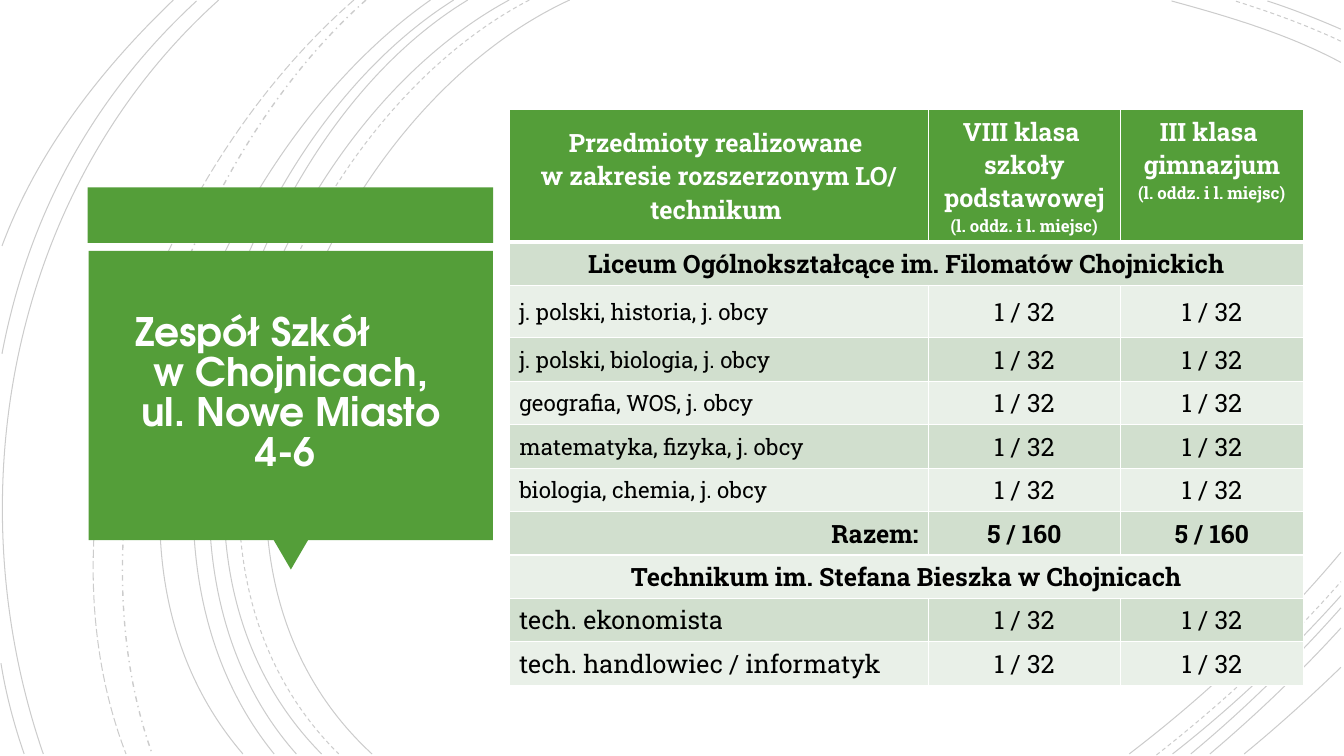
from dataclasses import dataclass

import pptx
import pptx.dml.color
import pptx.enum.dml
import pptx.enum.shapes
import pptx.enum.text
import pptx.oxml
import pptx.oxml.ns
import pptx.util
from pptx.util import Inches

Align = pptx.enum.text.PP_ALIGN
Anchor = pptx.enum.text.MSO_ANCHOR
Dash = pptx.enum.dml.MSO_LINE
Preset = pptx.enum.shapes.MSO_SHAPE
Point = tuple[float, float]


@dataclass(frozen=True)
class Theme:
    """Colours, fonts and type sizes of the slide."""
    green: str = "549E39"
    band_dark: str = "D1DFCE"
    band_light: str = "E9F0E8"
    white: str = "FFFFFF"
    black: str = "000000"
    title_font: str = "TeX Gyre Adventor"
    body_font: str = "Roboto Slab"
    title_size: int = 28
    table_size: int = 18
    subject_size: int = 16
    note_size: int = 12
    arc_opacity: int = 20


@dataclass(frozen=True)
class Arc:
    """A cubic curve with its two ends and two control points."""
    start: Point
    control_1: Point
    control_2: Point
    end: Point
    dash: Dash = Dash.SOLID
    width: float = 0.75


@dataclass(frozen=True)
class Block:
    """A green preset shape of the title panel."""
    preset: Preset
    left: float
    top: float
    width: float
    height: float
    rotation: int = 0


@dataclass(frozen=True)
class Row:
    """A table row with its texts, type size, weight and alignment."""
    texts: tuple[str, ...]
    size: int
    bold: bool = False
    align: Align = Align.LEFT
    height: float = 0.4


THEME = Theme()
ARCS = (
    Arc((5.65, 0), (3.15, 1.15), (1.43, 5.4), (3.69, 7.48)),
    Arc((13.3, 0.62), (12.78, 0.34), (12.17, 0.16), (11.62, 0.01)),
    Arc((11.2, 7.48), (11.96, 6.9), (12.68, 6.22), (13.3, 5.48)),
    Arc((5.25, 0), (2.85, 1.25), (1.23, 5.37), (3.36, 7.48), Dash.DASH),
    Arc((13.3, 0.41), (12.96, 0.25), (12.6, 0.12), (12.25, 0.01), Dash.DASH),
    Arc((11.47, 7.49), (12.12, 6.98), (12.75, 6.4), (13.3, 5.77), Dash.DASH),
    Arc((5.05, 0), (2.7, 1.27), (1.1, 5.37), (3.19, 7.48)),
    Arc((13.3, 0.29), (13.07, 0.19), (12.82, 0.09), (12.57, 0.01)),
    Arc((11.63, 7.48), (12.23, 7.01), (12.79, 6.48), (13.3, 5.91)),
    Arc((4.64, 0), (2.44, 1.33), (1.1, 5.41), (2.94, 7.48)),
    Arc((11.81, 7.48), (12.34, 7.04), (12.84, 6.55), (13.3, 6.03)),
    Arc((4.5, 0), (2.31, 1.38), (0.97, 5.33), (2.72, 7.48)),
    Arc((12, 7.48), (12.46, 7.09), (12.9, 6.67), (13.3, 6.23)),
    Arc((4.27, 0), (2.17, 1.47), (0.53, 5.29), (2.41, 7.48)),
    Arc((12.34, 7.48), (12.67, 7.21), (12.99, 6.92), (13.3, 6.62)),
    Arc((3.63, 0), (1.76, 1.66), (0.65, 5.09), (1.51, 7.48), Dash.DASH_DOT, 1),
    Arc((3.51, 0), (1.57, 1.69), (0.29, 4.99), (1.25, 7.48), Dash.LONG_DASH),
    Arc((2.17, 0), (0.11, 1.85), (-0.46, 4.9), (0.43, 7.48)),
    Arc((1.95, 0.01), (0.92, 0.96), (0.28, 2.14), (0.02, 3.51)),
    Arc((0.01, 6.58), (0.06, 6.89), (0.14, 7.19), (0.24, 7.48)),
    Arc((1.72, 0), (1, 0.69), (0.37, 1.5), (0.02, 2.44)),
)
BLOCKS = (
    Block(Preset.RECTANGLE, 0.87, 1.86, 4.02, 0.55),
    Block(Preset.ISOSCELES_TRIANGLE, 2.71, 5.35, 0.35, 0.3, 180),
    Block(Preset.RECTANGLE, 0.88, 2.49, 4.01, 2.87),
)
PLACES = ("1 / 32",) * 2
PLACES_NOTE = "(l. oddz. i l. miejsc)"
COLUMN_WIDTHS = (4.16, 1.9, 1.82)
ROWS = (
    Row(("Przedmioty realizowane \nw zakresie rozszerzonym LO/\ntechnikum ",
         f"VIII klasa \nszkoły podstawowej\n{PLACES_NOTE}",
         f"III klasa \ngimnazjum\n{PLACES_NOTE}"), THEME.table_size, True, Align.CENTER, 1.2),
    Row(("Liceum Ogólnokształcące im. Filomatów Chojnickich",),
        THEME.table_size, True, Align.CENTER),
    Row(("j. polski, historia, j. obcy", *PLACES), THEME.subject_size, height=0.52),
    Row(("j. polski, biologia, j. obcy", *PLACES), THEME.subject_size),
    Row(("geografia, WOS, j. obcy", *PLACES), THEME.subject_size),
    Row(("matematyka, fizyka, j. obcy", *PLACES), THEME.subject_size),
    Row(("biologia, chemia, j. obcy", *PLACES), THEME.subject_size),
    Row(("Razem:", "5 / 160", "5 / 160"), THEME.table_size, True, Align.RIGHT),
    Row(("Technikum im. Stefana Bieszka w Chojnicach",),
        THEME.table_size, True, Align.CENTER),
    Row(("tech. ekonomista", *PLACES), THEME.table_size),
    Row(("tech. handlowiec / informatyk", *PLACES), THEME.table_size),
)


def rgb(colour: str) -> pptx.dml.color.RGBColor:
    """Turn a hex string into a colour."""
    return pptx.dml.color.RGBColor.from_string(colour)


def style_runs(paragraph, font: str, size: int, colour: str, bold: bool) -> None:
    """Format every run of a paragraph."""
    for run in paragraph.runs:
        run.font.name = font
        run.font.size = pptx.util.Pt(size)
        run.font.bold = bold
        run.font.color.rgb = rgb(colour)


def bend(curve) -> None:
    """Turn the three segments of an outline into one cubic curve."""
    segments = list(curve._element.iter(pptx.oxml.ns.qn("a:lnTo")))
    cubic = pptx.oxml.parse_xml(f'<a:cubicBezTo {pptx.oxml.ns.nsdecls("a")}/>')
    segments[0].addprevious(cubic)
    for segment in segments:
        cubic.append(segment[0])
        segment.getparent().remove(segment)


def draw_arc(slide, arc: Arc) -> None:
    """Draw one thin translucent background arc."""
    corners = [(Inches(x), Inches(y))
               for x, y in (arc.start, arc.control_1, arc.control_2, arc.end)]
    builder = slide.shapes.build_freeform(*corners[0])
    builder.add_line_segments(corners[1:], close=False)
    curve = builder.convert_to_shape()
    bend(curve)
    curve.shadow.inherit = False
    curve.fill.background()
    curve.line.color.rgb = rgb(THEME.black)
    curve.line.width = pptx.util.Pt(arc.width)
    curve.line.dash_style = arc.dash
    ink = curve.line._get_or_add_ln().find(".//" + pptx.oxml.ns.qn("a:srgbClr"))
    ink.append(pptx.oxml.parse_xml(
        f'<a:alpha {pptx.oxml.ns.nsdecls("a")} val="{THEME.arc_opacity * 1000}"/>'))


def draw_block(slide, block: Block) -> None:
    """Draw one green shape of the title panel."""
    panel = slide.shapes.add_shape(
        block.preset, *map(Inches, (block.left, block.top, block.width, block.height)))
    panel.rotation = block.rotation
    panel.shadow.inherit = False
    panel.fill.solid()
    panel.fill.fore_color.rgb = rgb(THEME.green)
    panel.line.fill.background()


def draw_title(slide) -> None:
    """Write the school's name and address on the panel."""
    frame = slide.shapes.add_textbox(*map(Inches, (0.97, 2.57, 3.83, 2.69))).text_frame
    frame.word_wrap = True
    frame.vertical_anchor = Anchor.MIDDLE
    frame.margin_left = frame.margin_right = Inches(0.25)
    frame.margin_top = frame.margin_bottom = Inches(0.25)
    frame.text = "Zespół Szkół\nw Chojnicach,\vul. Nowe Miasto 4-6 "
    for paragraph in frame.paragraphs:
        paragraph.alignment = Align.CENTER
        paragraph.line_spacing = 0.85
        style_runs(paragraph, THEME.title_font, THEME.title_size, THEME.white, True)
    school = frame.paragraphs[0]
    school.alignment = Align.LEFT
    school._p.get_or_add_pPr().set("marL", str(Inches(0.12)))


def style_cell(cell, fill: str, bottom_width: float) -> None:
    """Give a cell its white borders and its fill."""
    properties = cell._tc.get_or_add_tcPr()
    for side, width in (("L", 1), ("R", 1), ("T", 1), ("B", bottom_width)):
        properties.append(pptx.oxml.parse_xml(
            f'<a:ln{side} {pptx.oxml.ns.nsdecls("a")} w="{pptx.util.Pt(width)}">'
            f'<a:solidFill><a:srgbClr val="{THEME.white}"/></a:solidFill></a:ln{side}>'))
    cell.fill.solid()
    cell.fill.fore_color.rgb = rgb(fill)
    cell.vertical_anchor = Anchor.MIDDLE


def draw_table(slide) -> None:
    """Draw the table of subjects and places."""
    table = slide.shapes.add_table(
        len(ROWS), len(COLUMN_WIDTHS), *map(Inches, (5.05, 1.09, 7.88, 5.32))).table
    for column, width in zip(table.columns, COLUMN_WIDTHS):
        column.width = Inches(width)
    for index, row in enumerate(ROWS):
        header = index == 0
        table.rows[index].height = Inches(row.height)
        band = THEME.band_dark if index % 2 else THEME.band_light
        for cell in table.rows[index].cells:
            style_cell(cell, THEME.green if header else band, 3 if header else 1)
        if len(row.texts) == 1:
            table.cell(index, 0).merge(table.cell(index, len(COLUMN_WIDTHS) - 1))
        for position, text in enumerate(row.texts):
            cell = table.cell(index, position)
            cell.text_frame.text = text
            for paragraph in cell.text_frame.paragraphs:
                paragraph.alignment = Align.CENTER if position else row.align
                size = THEME.table_size if position else row.size
                if paragraph.text == PLACES_NOTE:
                    size = THEME.note_size
                style_runs(paragraph, THEME.body_font, size,
                           THEME.white if header else THEME.black, row.bold)
    table.cell(0, 2).vertical_anchor = Anchor.TOP


def main() -> None:
    """Build and save the slide."""
    deck = pptx.Presentation()
    deck.slide_width, deck.slide_height = Inches(13.33), Inches(7.5)
    slide = deck.slides.add_slide(deck.slide_layouts[6])
    for arc in ARCS:
        draw_arc(slide, arc)
    for block in BLOCKS:
        draw_block(slide, block)
    draw_table(slide)
    draw_title(slide)
    deck.save("out.pptx")


if __name__ == "__main__":
    main()
